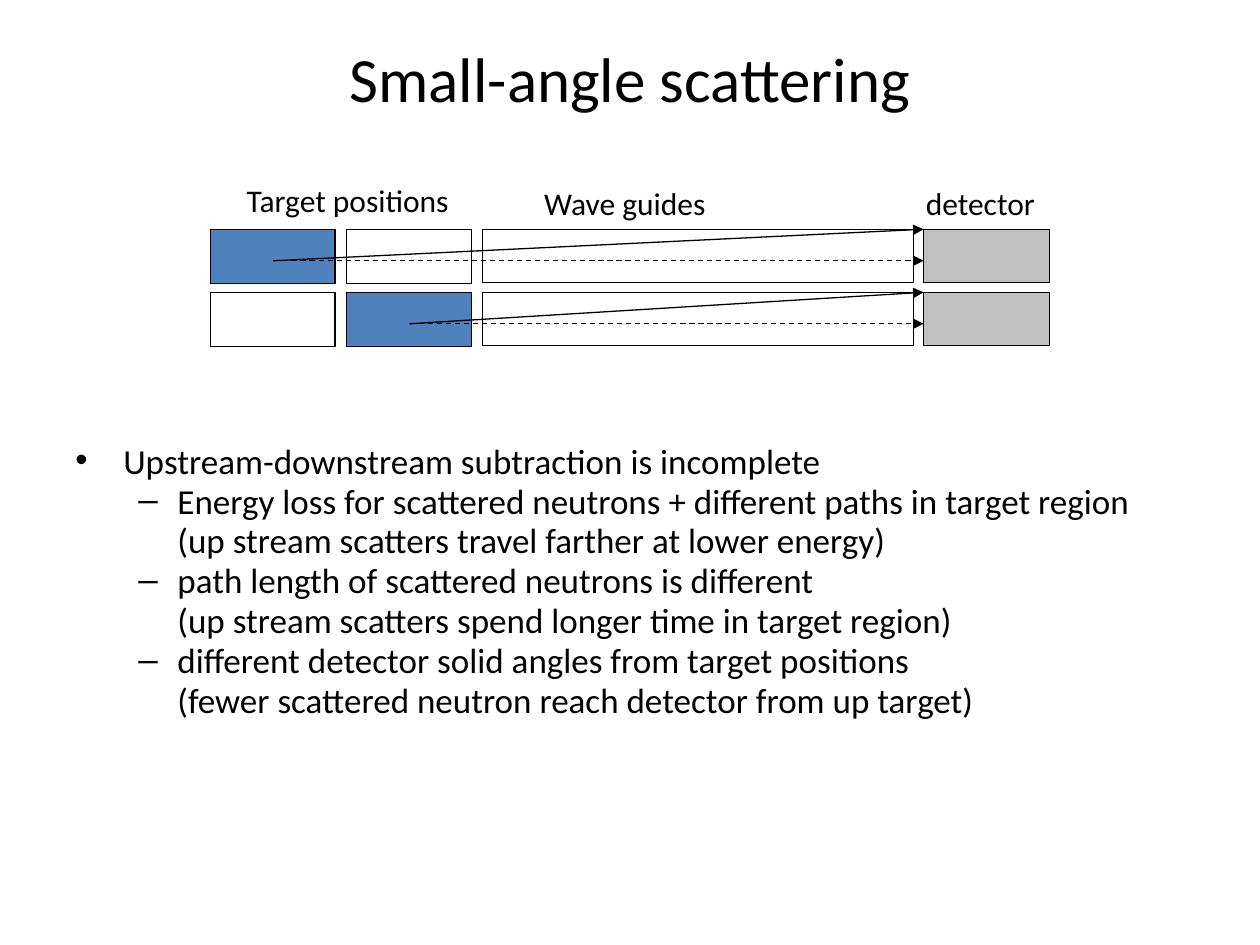
from typing import NamedTuple, Optional

from lxml import etree
from pptx import Presentation
from pptx.dml.color import RGBColor
from pptx.enum import dml, shapes, text
from pptx.oxml.ns import qn
from pptx.util import Inches, Pt

FONT = "Calibri"
COLORS = {"ink": "000000", "target": "4F81BD", "detector": "C0C0C0"}
LINE_WIDTH = Pt(0.75)

ROW_TOPS = (1.82, 2.32)
TARGET_LEFTS = (1.67, 2.75)
TARGET_WIDTH, TARGET_HEIGHT = 0.99, 0.43
GUIDE_LEFT, GUIDE_WIDTH = 3.83, 3.42
DETECTOR_LEFT, DETECTOR_WIDTH = 7.33, 1.0
CHANNEL_HEIGHT = 0.42
BEAM_DROP = 0.25  # from the top of a row to its beam axis


class Label(NamedTuple):
    caption: str
    left: float
    top: float
    width: float


class Point(NamedTuple):
    caption: str
    margin: float
    hanging: float = 0
    bullet: Optional[str] = None


LABELS = (
    Label("Target positions", 1.86, 1.39, 1.98),
    Label("Wave guides", 4.22, 1.41, 1.65),
    Label("detector", 7.25, 1.41, 1.1),
)

REASONS = (
    ("Energy loss for scattered neutrons + different paths in target region",
     "(up stream scatters travel farther at lower energy)"),
    ("path length of scattered neutrons is different",
     "(up stream scatters spend longer time in target region)"),
    ("different detector solid angles from target positions",
     "(fewer scattered neutron reach detector from up target)"),
)


def color(name: str) -> RGBColor:
    return RGBColor.from_string(COLORS[name])


def add_run(paragraph, words: str, size: float) -> None:
    run = paragraph.add_run()
    run.text = words
    run.font.name = FONT
    run.font.size = Pt(size)
    run.font.color.rgb = color("ink")


def add_frame(slide, left: float, top: float, width: float, height: float,
              wrap: bool = True):
    box = slide.shapes.add_textbox(
        Inches(left), Inches(top), Inches(width), Inches(height))
    box.text_frame.word_wrap = wrap
    return box.text_frame


def add_title(slide, words: str) -> None:
    frame = add_frame(slide, 0.5, 0.17, 9, 0.88)
    frame.vertical_anchor = text.MSO_ANCHOR.MIDDLE
    frame.paragraphs[0].alignment = text.PP_ALIGN.CENTER
    add_run(frame.paragraphs[0], words, 36)


def add_points(slide, points: list[Point]) -> None:
    frame = add_frame(slide, 0.5, 3.5, 9.25, 2.58)
    for index, point in enumerate(points):
        paragraph = frame.add_paragraph() if index else frame.paragraphs[0]
        paragraph.level = 1 if index else 0
        paragraph.line_spacing = 0.8
        if index:
            paragraph.space_before = Pt(3.6)
        properties = paragraph._p.get_or_add_pPr()
        properties.set("marL", str(Inches(point.margin)))
        properties.set("indent", str(-Inches(point.hanging)))
        if point.bullet:
            etree.SubElement(properties, qn("a:buFont")).set("typeface", "Arial")
            etree.SubElement(properties, qn("a:buChar")).set("char", point.bullet)
        else:
            etree.SubElement(properties, qn("a:buNone"))
        add_run(paragraph, point.caption, 20)


def add_block(slide, left: float, top: float, width: float, height: float,
              fill: Optional[str] = None) -> None:
    block = slide.shapes.add_shape(
        shapes.MSO_SHAPE.RECTANGLE,
        Inches(left), Inches(top), Inches(width), Inches(height))
    block.shadow.inherit = False
    if fill:
        block.fill.solid()
        block.fill.fore_color.rgb = color(fill)
    else:
        block.fill.background()
    block.line.color.rgb = color("ink")
    block.line.width = LINE_WIDTH


def add_path(slide, start: tuple[float, float], end: tuple[float, float],
             dashed: bool = False) -> None:
    """Draw a neutron's path with an arrowhead at its end."""
    path = slide.shapes.add_connector(
        shapes.MSO_CONNECTOR.STRAIGHT, *(Inches(v) for v in (*start, *end)))
    path.line.color.rgb = color("ink")
    path.line.width = LINE_WIDTH
    if dashed:
        path.line.dash_style = dml.MSO_LINE.DASH
    etree.SubElement(path.line._get_or_add_ln(), qn("a:tailEnd")).set("type", "triangle")
    etree.SubElement(path._element.spPr, qn("a:effectLst"))


def add_setup(slide) -> None:
    """Draw both target settings; the target is upstream in the first row."""
    for row, top in enumerate(ROW_TOPS):
        for column, left in enumerate(TARGET_LEFTS):
            add_block(slide, left, top, TARGET_WIDTH, TARGET_HEIGHT,
                      "target" if column == row else None)
    for top, left in zip(ROW_TOPS, TARGET_LEFTS):
        axis = top + BEAM_DROP
        source = (left + 0.5, axis)
        add_path(slide, source, (DETECTOR_LEFT, top))
        add_path(slide, source, (DETECTOR_LEFT, axis), dashed=True)
    for top in ROW_TOPS:
        add_block(slide, GUIDE_LEFT, top, GUIDE_WIDTH, CHANNEL_HEIGHT)
        add_block(slide, DETECTOR_LEFT, top, DETECTOR_WIDTH, CHANNEL_HEIGHT, "detector")


def main() -> None:
    presentation = Presentation()
    presentation.slide_width, presentation.slide_height = Inches(10), Inches(7.5)
    slide = presentation.slides.add_slide(presentation.slide_layouts[6])

    add_title(slide, "Small-angle scattering")
    points = [Point("Upstream-downstream subtraction is incomplete", 0.38, 0.38, "•")]
    for reason, detail in REASONS:
        points += [Point(reason, 0.81, 0.31, "–"), Point(detail, 0.81)]
    add_points(slide, points)
    add_setup(slide)
    for label in LABELS:
        frame = add_frame(slide, label.left, label.top, label.width, 0.4, wrap=False)
        add_run(frame.paragraphs[0], label.caption, 18)

    presentation.save("out.pptx")


if __name__ == "__main__":
    main()
